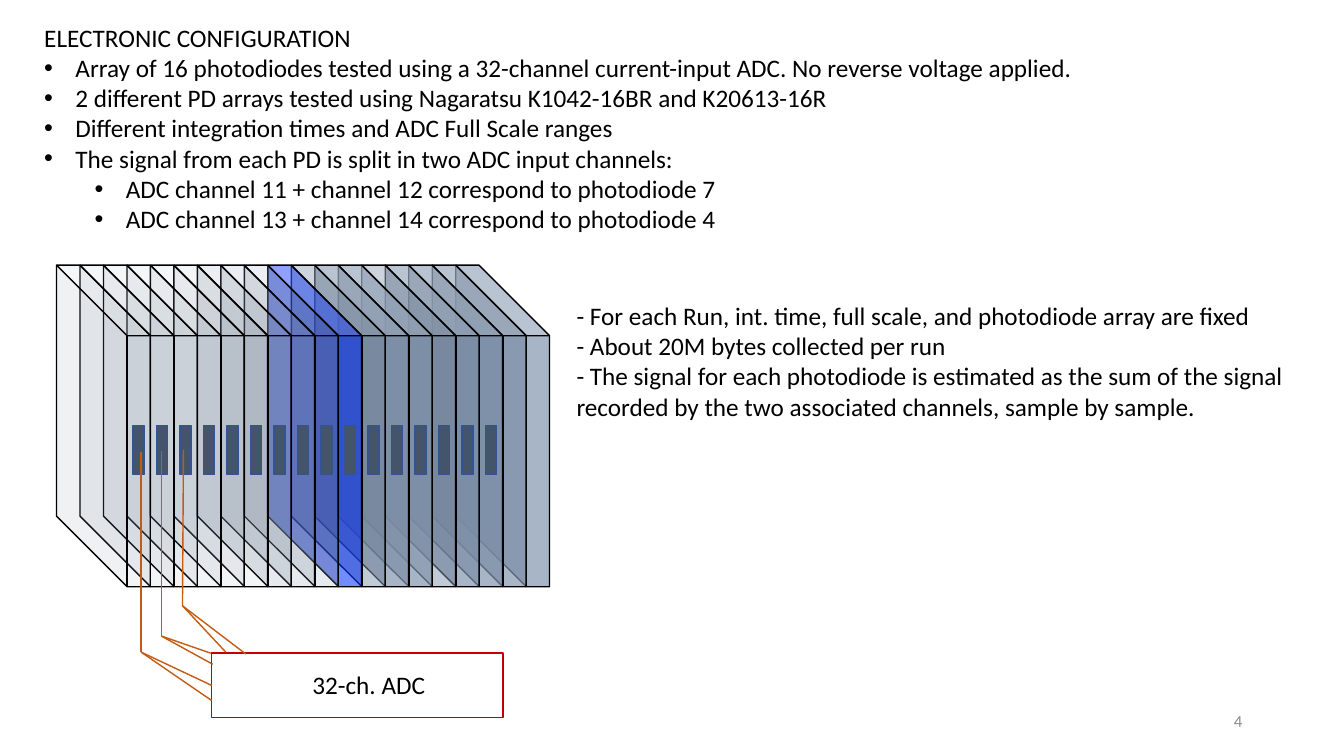
from lxml import etree
from pptx import Presentation
from pptx.dml.color import RGBColor
from pptx.enum.shapes import MSO_CONNECTOR, MSO_SHAPE
from pptx.enum.text import MSO_ANCHOR, PP_ALIGN
from pptx.oxml.ns import qn
from pptx.util import Inches, Pt

CUBE, RECT = MSO_SHAPE.CUBE, MSO_SHAPE.RECTANGLE
STRAIGHT = MSO_CONNECTOR.STRAIGHT
RIGHT, MIDDLE = PP_ALIGN.RIGHT, MSO_ANCHOR.MIDDLE

COLORS = {
    "text": "000000", "number": "8C8C8C", "edge": "000000",
    "slab": "8497B0", "highlight": "0431FD",
    "diode": "44546A", "diode_edge": "325491",
    "adc_edge": "C00000", "wire": "C55A11",
}


def rgb(name):
    return RGBColor.from_string(COLORS[name])


def add_text(left, top, width, height, lines, size=18, color="text", wrap=True):
    """Add a text box; each line is (text, level), level None meaning no bullet."""
    box = slide.shapes.add_textbox(Inches(left), Inches(top), Inches(width), Inches(height))
    tf = box.text_frame
    tf.word_wrap = wrap
    for i, (text, level) in enumerate(lines):
        p = tf.paragraphs[0] if i == 0 else tf.add_paragraph()
        p.text = text
        if level is not None:
            p.level = level
            pPr = p._p.get_or_add_pPr()
            pPr.set("marL", str(Inches(0.31 + 0.5 * level)))
            pPr.set("indent", str(Inches(-0.31)))
            etree.SubElement(pPr, qn("a:buFont")).set("typeface", "Arial")
            etree.SubElement(pPr, qn("a:buChar")).set("char", "•")
        font = p.runs[0].font
        font.name = "Calibri"
        font.size = Pt(size)
        font.color.rgb = rgb(color)
    return tf


prs = Presentation()
prs.slide_width, prs.slide_height = Inches(13.33), Inches(7.5)
slide = prs.slides.add_slide(prs.slide_layouts[6])

add_text(0.34, 0.17, 10.69, 2.83, [
    ("ELECTRONIC CONFIGURATION", None),
    ("Array of 16 photodiodes tested using a 32-channel current-input ADC. "
     "No reverse voltage applied.", 0),
    ("2 different PD arrays tested using Nagaratsu K1042-16BR and K20613-16R", 0),
    ("Different integration times and ADC Full Scale ranges", 0),
    ("The signal from each PD is split in two ADC input channels:", 0),
    ("ADC channel 11 + channel 12 correspond to photodiode 7", 1),
    ("ADC channel 13 + channel 14 correspond to photodiode 4", 1),
])

# Detector: overlapping slabs, drawn from right to left, with the photodiodes in front
detector = slide.shapes.add_group_shape()
SLAB_OPACITY = [70, 70, 70, 70, 50, 70, 70, 50, 56, 20, 20, 20] + [10] * 6
HIGHLIGHTED = 8
PITCH = 3.96 / 17
for i, opacity in enumerate(SLAB_OPACITY):
    sp = detector.shapes.add_shape(
        CUBE, Inches(4.52 - i * PITCH), Inches(2.63), Inches(0.93), Inches(3.19))
    sp.shadow.inherit = False
    sp.adjustments[0] = 0.753
    sp.rotation = 180
    sp._element.spPr.find(qn("a:xfrm")).set("flipV", "1")
    sp.fill.solid()
    sp.fill.fore_color.rgb = rgb("highlight" if i == HIGHLIGHTED else "slab")
    fill_color = sp._element.spPr.find(qn("a:solidFill"))[0]
    etree.SubElement(fill_color, qn("a:alpha")).set("val", str(opacity * 1000))
    sp.line.color.rgb = rgb("edge")
    sp.line.width = Pt(1)

for i in range(16):
    sp = detector.shapes.add_shape(
        RECT, Inches(1.32 + i * PITCH), Inches(4.22), Inches(0.11), Inches(0.49))
    sp.shadow.inherit = False
    sp.fill.solid()
    sp.fill.fore_color.rgb = rgb("diode")
    sp.line.color.rgb = rgb("diode_edge")
    sp.line.width = Pt(1)

adc = slide.shapes.add_shape(RECT, Inches(2.1), Inches(6.48), Inches(2.89), Inches(0.64))
adc.shadow.inherit = False
adc.fill.background()
adc.line.color.rgb = rgb("adc_edge")
adc.line.width = Pt(1)
add_text(3, 6.59, 1.33, 0.4, [("32-ch. ADC", None)], wrap=False)

# Each photodiode wire runs down to a split, then into two ADC inputs
ADC_LEFT_MIDDLE = (2.1, 6.8)
WIRES = [
    ((1.6, 4.47), (1.6, 6.31), [(2.09, 6.48), (2.11, 6.59)]),
    ((1.4, 4.48), (1.4, 6.47), [ADC_LEFT_MIDDLE, (2.1, 6.95)]),
    ((1.82, 4.46), (1.81, 6.01), [(2.44, 6.49), (2.24, 6.47)]),
]
for diode, split, inputs in WIRES:
    for start, end in [(diode, split)] + [(split, point) for point in inputs]:
        wire = slide.shapes.add_connector(STRAIGHT, *map(Inches, start + end))
        if end == ADC_LEFT_MIDDLE:
            wire.end_connect(adc, 1)
        wire.line.color.rgb = rgb("wire")
        wire.line.width = Pt(1)
        etree.SubElement(wire._element.spPr, qn("a:effectLst"))

add_text(5.62, 2.93, 7.6, 1.32, [
    ("- For each Run, int. time, full scale, and photodiode array are fixed", None),
    ("- About 20M bytes collected per run", None),
    ("- The signal for each photodiode is estimated as the sum of the signal "
     "recorded by the two associated channels, sample by sample.", None),
])

tf = add_text(9.42, 6.95, 3, 0.4, [("4", None)], size=12, color="number")
tf.vertical_anchor = MIDDLE
tf.paragraphs[0].alignment = RIGHT

prs.save("out.pptx")
